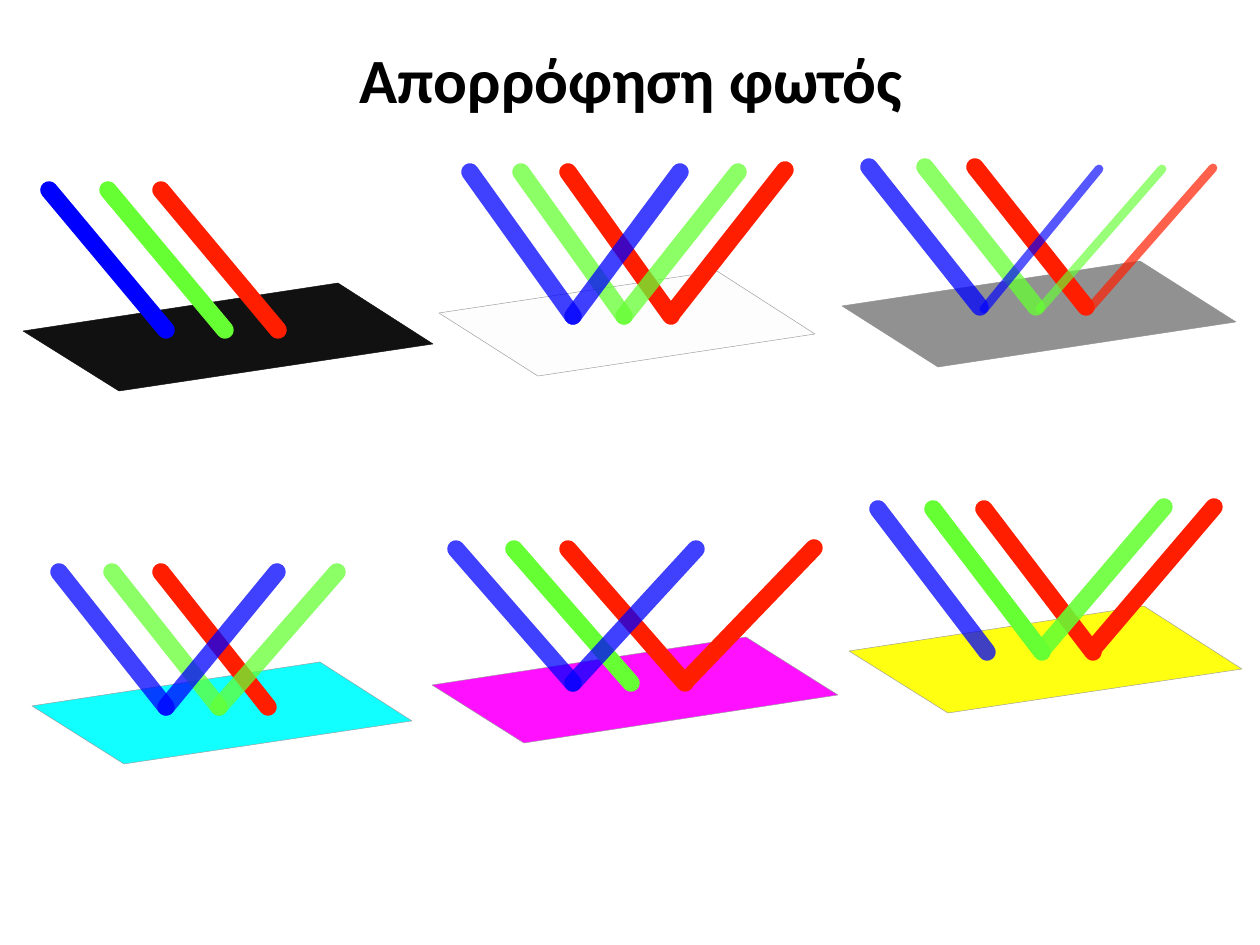
from dataclasses import dataclass

import lxml.etree
import pptx
import pptx.dml.color
import pptx.enum.shapes
import pptx.enum.text
import pptx.oxml.ns
import pptx.util

EMU_PER_PX = 914400 / 126


def emu(px):
    return pptx.util.Emu(round(px * EMU_PER_PX))


def rgb(value):
    return pptx.dml.color.RGBColor.from_string(value)


def add_child(parent, tag, **attributes):
    return lxml.etree.SubElement(parent, pptx.oxml.ns.qn(tag), attributes)


def apply_format(target, values):
    for name, value in values.items():
        setattr(target, name, value)


@dataclass(frozen=True)
class Theme:
    font: str = "Calibri"
    title_size: int = 36
    text: str = "000000"
    blue: str = "0000FF"
    green: str = "66FF33"
    red: str = "FF1F00"
    black: str = "111111"
    white: str = "FDFDFD"
    grey: str = "919191"
    cyan: str = "11FFFF"
    magenta: str = "FF11FF"
    yellow: str = "FFFF11"
    edge: str = "999999"
    edge_width: float = 0.25
    wide_beam: int = 10
    narrow_beam: int = 5


class SlideBuilder:
    def __init__(self, slide, theme):
        self.slide = slide
        self.theme = theme

    def title(self, text, left, top, width, height):
        box = self.slide.shapes.add_textbox(*map(emu, (left, top, width, height)))
        apply_format(box.text_frame, {
            "word_wrap": True,
            "vertical_anchor": pptx.enum.text.MSO_ANCHOR.MIDDLE,
        })
        paragraph = box.text_frame.paragraphs[0]
        apply_format(paragraph, {"text": text, "alignment": pptx.enum.text.PP_ALIGN.CENTER})
        font = paragraph.runs[0].font
        apply_format(font, {
            "name": self.theme.font,
            "size": pptx.util.Pt(self.theme.title_size),
            "bold": True,
        })
        font.color.rgb = rgb(self.theme.text)

    def surface(self, group, color, corners):
        builder = group.shapes.build_freeform(*corners[0], scale=EMU_PER_PX)
        builder.add_line_segments(corners[1:], close=True)
        shape = builder.convert_to_shape()
        shape.shadow.inherit = False
        shape.fill.solid()
        shape.fill.fore_color.rgb = rgb(color)
        edge = color if color in (self.theme.black, self.theme.grey) else self.theme.edge
        shape.line.color.rgb = rgb(edge)
        shape.line.width = pptx.util.Pt(self.theme.edge_width)

    def beam(self, group, color, start, end, width, opacity):
        connector = group.shapes.add_connector(
            pptx.enum.shapes.MSO_CONNECTOR.STRAIGHT, *map(emu, (*start, *end)))
        connector.line.color.rgb = rgb(color)
        connector.line.width = pptx.util.Pt(width)
        properties = connector._element.spPr
        properties.find(pptx.oxml.ns.qn("a:ln")).set("cap", "rnd")
        if opacity < 100:
            add_child(properties.xpath(".//a:srgbClr")[0], "a:alpha", val=str(opacity * 1000))
        add_child(properties, "a:effectLst")

    def panel(self, color, corners, starts, top, shift, opacities, reflected):
        theme = self.theme
        group = self.slide.shapes.add_group_shape()
        self.surface(group, color, corners)
        for beam_color, x, opacity in zip((theme.blue, theme.green, theme.red), starts, opacities):
            end = (x + shift[0], top + shift[1])
            self.beam(group, beam_color, (x, top), end, theme.wide_beam, opacity)
        for beam_color, start, end, width, opacity in reflected:
            self.beam(group, beam_color, start, end, width, opacity)


def main():
    presentation = pptx.Presentation()
    apply_format(presentation, {"slide_width": emu(1260), "slide_height": emu(945)})
    theme = Theme()
    slide = presentation.slides.add_slide(presentation.slide_layouts[6])
    builder = SlideBuilder(slide, theme)
    builder.title("Απορρόφηση φωτός", 64, 16, 1134, 125)

    blue, green, red = theme.blue, theme.green, theme.red
    wide, narrow = theme.wide_beam, theme.narrow_beam
    panels = [
        (theme.black, [(23, 331), (338, 283), (433, 344), (119, 391)],
         (49, 108, 161), 190, (117, 140), (100, 100, 100), []),
        (theme.white, [(439, 313), (717, 271), (815, 334), (538, 376)],
         (470, 521, 568), 172, (103, 144), (75, 75, 100),
         [(blue, (680, 172), (573, 316), wide, 75),
          (green, (738, 172), (624, 316), wide, 75),
          (red, (785, 170), (671, 315), wide, 100)]),
        (theme.grey, [(842, 306), (1140, 261), (1236, 322), (938, 367)],
         (869, 925, 975), 167, (111, 140), (75, 75, 100),
         [(blue, (1099, 169), (984, 309), narrow, 65),
          (green, (1162, 169), (1040, 309), narrow, 65),
          (red, (1213, 168), (1091, 307), narrow, 70)]),
        (theme.cyan, [(32, 706), (320, 662), (412, 721), (124, 764)],
         (59, 112, 161), 572, (107, 135), (75, 75, 100),
         [(blue, (277, 572), (166, 707), wide, 75),
          (green, (337, 572), (219, 707), wide, 75)]),
        (theme.magenta, [(432, 685), (746, 637), (838, 695), (524, 743)],
         (456, 514, 568), 549, (117, 134), (75, 100, 100),
         [(blue, (696, 549), (573, 683), wide, 75),
          (red, (814, 548), (685, 682), wide, 100)]),
        (theme.yellow, [(849, 651), (1144, 606), (1242, 669), (948, 713)],
         (878, 933, 984), 509, (109, 143), (75, 100, 100),
         [(red, (1214, 507), (1092, 650), wide, 100),
          (green, (1164, 507), (1042, 650), wide, 88)]),
    ]
    for panel in panels:
        builder.panel(*panel)
    presentation.save("out.pptx")


if __name__ == "__main__":
    main()
